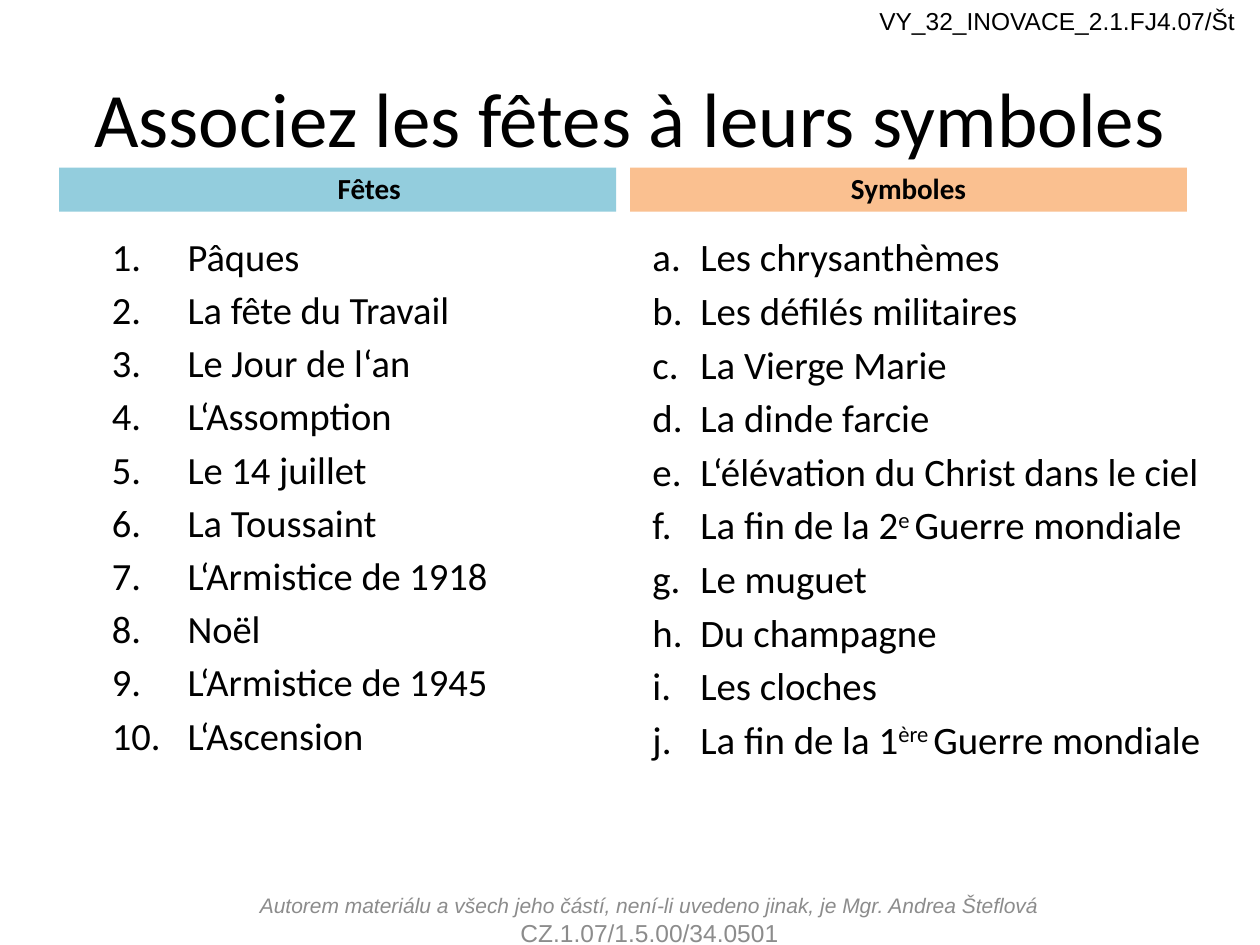
import pptx
import pptx.dml.color
import pptx.enum.shapes
import pptx.enum.text
import pptx.util
import lxml.etree

HUES = {"ink": "000000", "grey": "8C8C8C", "blue": "93CDDD", "peach": "FAC090"}
COLS, ROWS = 100, 75
ALIGN = pptx.enum.text.PP_ALIGN
ANCHOR = pptx.enum.text.MSO_ANCHOR

FEASTS = ["Pâques", "La fête du Travail", "Le Jour de l‘an", "L‘Assomption",
          "Le 14 juillet", "La Toussaint", "L‘Armistice de 1918", "Noël",
          "L‘Armistice de 1945", "L‘Ascension"]
SIGNS = ["Les chrysanthèmes", "Les défilés militaires", "La Vierge Marie",
         "La dinde farcie", "L‘élévation du Christ dans le ciel",
         "La fin de la 2^e ^Guerre mondiale", "Le muguet", "Du champagne",
         "Les cloches", "La fin de la 1^ère ^Guerre mondiale"]


class Page:
    """Holds the style and the current slide, placing items on a 100 by 75 grid."""

    def __init__(self, deck):
        self.wide = deck.slide_width / COLS
        self.high = deck.slide_height / ROWS
        self.slide = deck.slides.add_slide(deck.slide_layouts[6])

    def spot(self, x, y, w, h):
        return [round(n * unit) for n, unit in
                zip((x, y, w, h), (self.wide, self.high) * 2)]

    def style(self, para, size, face="Calibri", hue="ink", bold=False, slant=False):
        for run in para.runs:
            font = run.font
            font.name, font.size = face, pptx.util.Pt(size)
            font.bold, font.italic = bold, slant
            font.color.rgb = pptx.dml.color.RGBColor.from_string(HUES[hue])

    def indent(self, para, left, hang):
        props = para._p.get_or_add_pPr()
        props.set("marL", str(round(left * self.wide)))
        props.set("indent", str(round(-hang * self.wide)))
        return props

    def text(self, area, lines, align=ALIGN.CENTER, anchor=ANCHOR.MIDDLE, wrap=True):
        frame = self.slide.shapes.add_textbox(*self.spot(*area)).text_frame
        frame.word_wrap, frame.vertical_anchor = wrap, anchor
        frame.text = "\n".join(words for words, look in lines)
        for para, (words, look) in zip(frame.paragraphs, lines):
            para.alignment = align
            self.style(para, **look)

    def band(self, area, words, fill, left=0, hang=0):
        kind = pptx.enum.shapes.MSO_SHAPE.RECTANGLE
        shape = self.slide.shapes.add_shape(kind, *self.spot(*area))
        shape.shadow.inherit = False
        shape.fill.solid()
        shape.fill.fore_color.rgb = pptx.dml.color.RGBColor.from_string(HUES[fill])
        shape.line.fill.background()
        frame = shape.text_frame
        frame.text, frame.vertical_anchor = words, ANCHOR.BOTTOM
        para = frame.paragraphs[0]
        para.alignment = ALIGN.CENTER
        self.indent(para, left, hang)
        self.style(para, 16.6, bold=True)

    def list(self, area, items, mark, size, left, hang):
        frame = self.slide.shapes.add_textbox(*self.spot(*area)).text_frame
        frame.word_wrap = True
        for i, item in enumerate(items):
            para = frame.add_paragraph() if i else frame.paragraphs[0]
            for j, part in enumerate(item.split("^")):
                run = para.add_run()
                run.text = part
                if j % 2:
                    run.font._element.set("baseline", "30000")
            para.space_before = pptx.util.Pt(4)
            self.style(para, size)
            props = self.indent(para, left, hang)
            space = pptx.oxml.ns.qn
            face = lxml.etree.SubElement(props, space("a:buFont"))
            face.set("typeface", "+mj-lt")
            lxml.etree.SubElement(props, space("a:buAutoNum")).set("type", mark)


def main():
    deck = pptx.Presentation()
    deck.slide_width = pptx.util.Inches(10)
    deck.slide_height = pptx.util.Inches(7.5)
    page = Page(deck)
    page.text((5, 3, 90, 12.5),
              [("Associez les fêtes à leurs symboles", {"size": 44})])
    page.band((4.7, 13.3, 44.2, 3.5), "Fêtes", "blue", 7.9, 2.9)
    page.list((5, 18, 44.2, 49), FEASTS, "arabicPeriod", 22, 8.9, 6)
    page.band((50, 13.3, 44.2, 3.5), "Symboles", "peach")
    page.list((50.8, 18, 46.1, 49.2), SIGNS, "alphaLcPeriod", 22.2, 3.8, 3.8)
    foot = {"face": "Arial", "hue": "grey"}
    page.text((19.5, 71, 64.1, 4), [
        ("Autorem materiálu a všech jeho částí, není-li uvedeno jinak, "
         "je Mgr. Andrea Šteflová", {"size": 12, "slant": True, **foot}),
        ("CZ.1.07/1.5.00/34.0501", {"size": 14, **foot})])
    page.text((68.8, 0, 31.2, 3.4),
              [("VY_32_INOVACE_2.1.FJ4.07/Št", {"size": 14, "face": "Arial"})],
              ALIGN.LEFT, ANCHOR.TOP, False)
    deck.save("out.pptx")


if __name__ == "__main__":
    main()
